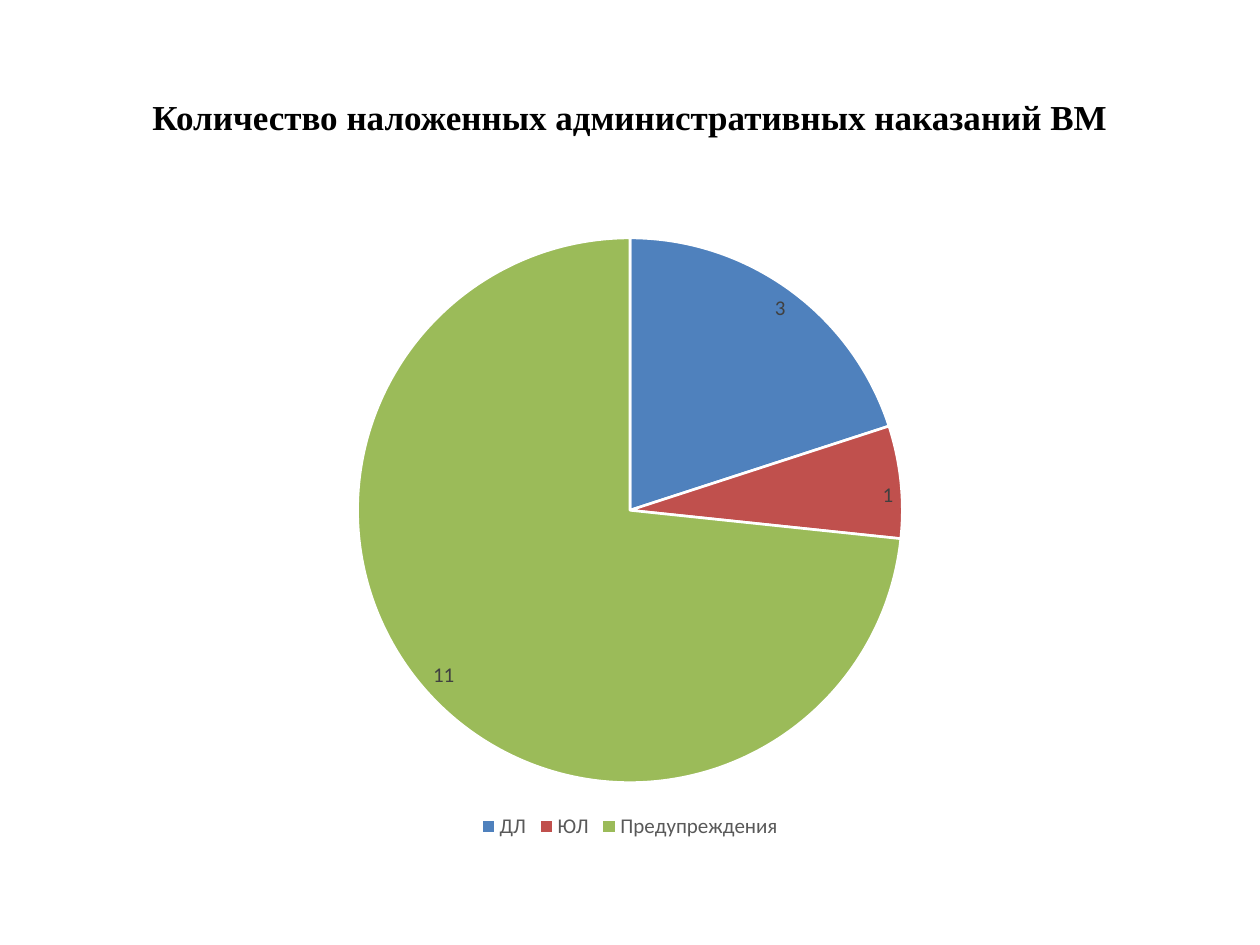
from pptx import Presentation
from pptx.chart.data import CategoryChartData
from pptx.dml.color import RGBColor
from pptx.enum.chart import XL_CHART_TYPE as ChartType
from pptx.enum.chart import XL_LABEL_POSITION as LabelPos
from pptx.enum.chart import XL_LEGEND_POSITION as LegendPos
from pptx.enum.text import MSO_ANCHOR, PP_ALIGN
from pptx.util import Inches, Pt

TITLE = "Количество наложенных административных наказаний ВМ"
PENALTIES = [
    ("ДЛ", 3, "4F81BD"),
    ("ЮЛ", 1, "C0504D"),
    ("Предупреждения", 11, "9BBB59"),
]
WIDTH, HEIGHT = 10, 7.5
MARGIN = 0.05 * WIDTH
TITLE_BOX = (MARGIN, 0.04 * HEIGHT, WIDTH - 2 * MARGIN, HEIGHT / 6)
CHART_BOX = (MARGIN, 1.75, WIDTH - 2 * MARGIN, 0.66 * HEIGHT)


def style_font(font, name, size, color, bold=False):
    font.name, font.size, font.bold = name, Pt(size), bold
    font.color.rgb = RGBColor.from_string(color)


def add_title(slide):
    sp = slide.shapes.title
    sp.left, sp.top, sp.width, sp.height = map(Inches, TITLE_BOX)
    tf = sp.text_frame
    tf.word_wrap = True
    tf.vertical_anchor = MSO_ANCHOR.MIDDLE
    p = tf.paragraphs[0]
    p.alignment = PP_ALIGN.CENTER
    r = p.add_run()
    r.text = TITLE
    style_font(r.font, "Times New Roman", 20, "000000", bold=True)


def add_pie(slide):
    names, values, colors = zip(*PENALTIES)
    data = CategoryChartData()
    data.categories = names
    data.add_series("Series 1", values)
    chart = slide.shapes.add_chart(
        ChartType.PIE, *map(Inches, CHART_BOX), data).chart
    style_font(chart.font, "Calibri", 10, "000000")
    chart.has_title = False

    chart.has_legend = True
    legend = chart.legend
    legend.position = LegendPos.BOTTOM
    legend.include_in_layout = False
    style_font(legend.font, "Calibri", 12, "595959")

    plot = chart.plots[0]
    plot.vary_by_categories = True
    plot.has_data_labels = True
    labels = plot.data_labels
    labels.show_value = True
    labels.show_percentage = False
    labels.position = LabelPos.INSIDE_END
    style_font(labels.font, "Calibri", 12, "404040")

    for i, color in enumerate(colors):
        fmt = plot.series[0].points[i].format
        fmt.fill.solid()
        fmt.fill.fore_color.rgb = RGBColor.from_string(color)
        fmt.line.color.rgb = RGBColor.from_string("FFFFFF")
        fmt.line.width = Pt(1.5)


def main():
    prs = Presentation()
    prs.slide_width, prs.slide_height = Inches(WIDTH), Inches(HEIGHT)
    s = prs.slides.add_slide(prs.slide_layouts.get_by_name("Title Only"))
    add_title(s)
    add_pie(s)
    prs.save("out.pptx")


if __name__ == "__main__":
    main()
